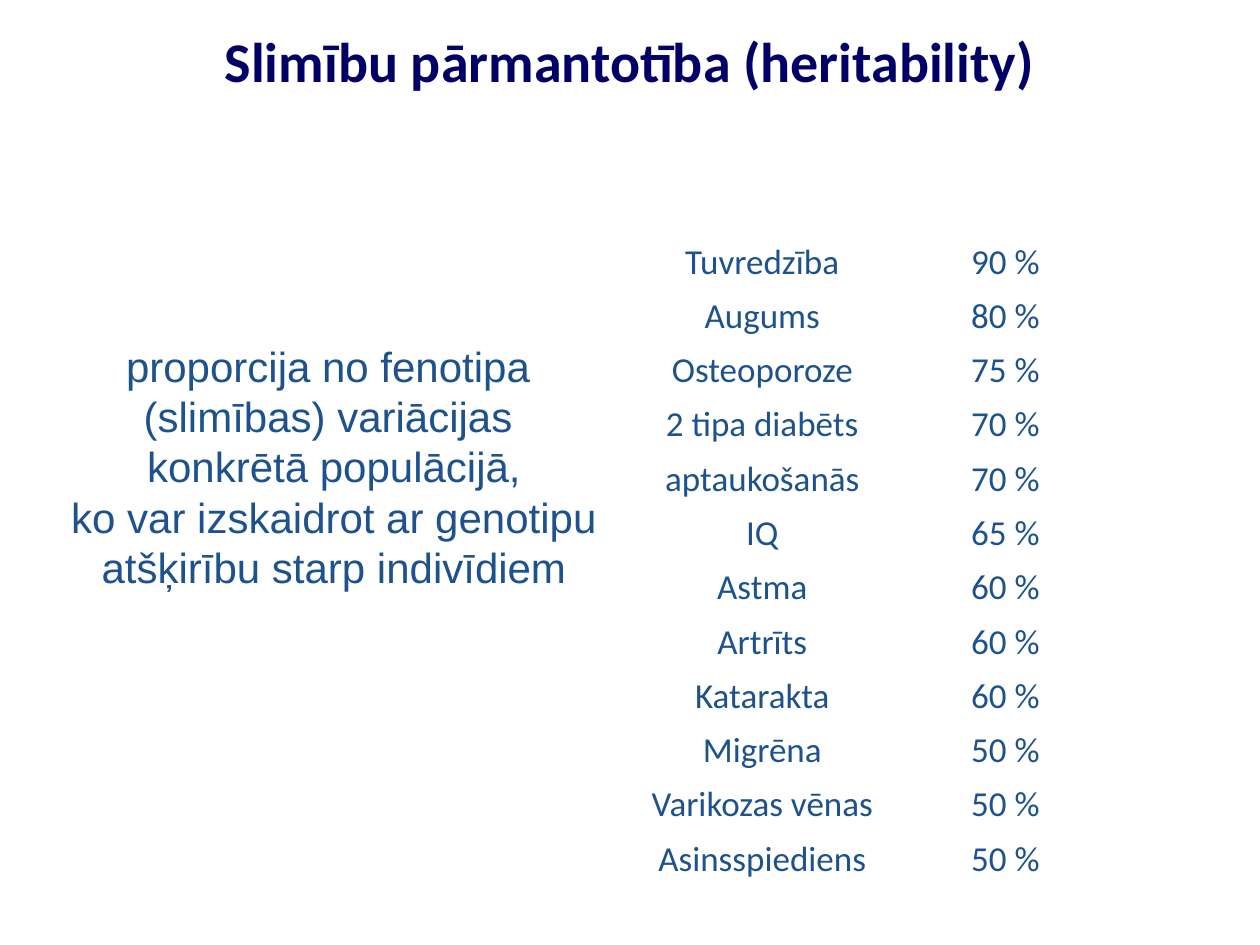
from dataclasses import dataclass

import pptx
import pptx.dml.color
import pptx.enum.text
import pptx.util

Inches = pptx.util.Inches
Anchor = pptx.enum.text.MSO_ANCHOR
AutoSize = pptx.enum.text.MSO_AUTO_SIZE


@dataclass(frozen=True)
class Theme:
    title_color: str = "000066"
    body_color: str = "1D528D"
    heading_font: str = "Calibri"
    body_font: str = "Arial"
    title_size: int = 32
    definition_size: int = 24
    table_size: int = 20


THEME = Theme()

TITLE = "Slimību pārmantotība (heritability)"
DEFINITION = [
    "proporcija no fenotipa ",
    "(slimības) variācijas ",
    "konkrētā populācijā,",
    " ko var izskaidrot ar genotipu \vatšķirību starp indivīdiem",
]
HERITABILITY = [
    ("Tuvredzība", 90),
    ("Augums", 80),
    ("Osteoporoze", 75),
    ("2 tipa diabēts", 70),
    ("aptaukošanās", 70),
    ("IQ", 65),
    ("Astma", 60),
    ("Artrīts", 60),
    ("Katarakta", 60),
    ("Migrēna", 50),
    ("Varikozas vēnas", 50),
    ("Asinsspiediens", 50),
]


def write(frame, text, *, size, font, color, bold=False, line_spacing=None):
    """Fill a text frame with centred paragraphs, one per line of text."""
    for index, line in enumerate(text.split("\n")):
        paragraph = frame.add_paragraph() if index else frame.paragraphs[0]
        paragraph.text = line
        paragraph.alignment = pptx.enum.text.PP_ALIGN.CENTER
        if line_spacing:
            paragraph.line_spacing = line_spacing
        for run in paragraph.runs:
            run.font.size = pptx.util.Pt(size)
            run.font.name = font
            run.font.bold = bold
            run.font.color.rgb = pptx.dml.color.RGBColor.from_string(color)


def add_title(slide, left, top, width, height):
    frame = slide.shapes.add_textbox(left, top, width, height).text_frame
    frame.word_wrap = True
    frame.vertical_anchor = Anchor.MIDDLE
    write(frame, TITLE, size=THEME.title_size, font=THEME.heading_font,
          color=THEME.title_color, bold=True)


def add_definition(slide, left, top, width, height):
    frame = slide.shapes.add_textbox(left, top, width, height).text_frame
    frame.word_wrap = False
    frame.auto_size = AutoSize.SHAPE_TO_FIT_TEXT
    write(frame, "\n".join(DEFINITION), size=THEME.definition_size,
          font=THEME.body_font, color=THEME.body_color)


def add_heritability_table(slide, left, top, width, height):
    table = slide.shapes.add_table(
        len(HERITABILITY), 2, left, top, width, height).table
    table.first_row = False
    table.horz_banding = False
    percent_width = Inches(0.98)
    table.columns[0].width = width - percent_width
    table.columns[1].width = percent_width
    for row, (trait, percent) in zip(table.rows, HERITABILITY):
        for cell, text in zip(row.cells, (trait, f"{percent} %")):
            cell.fill.background()
            cell.margin_left = cell.margin_right = Inches(0.07)
            cell.margin_top = cell.margin_bottom = 0
            write(cell.text_frame, text, size=THEME.table_size,
                  font=THEME.heading_font, color=THEME.body_color,
                  line_spacing=1.15)


def main():
    deck = pptx.Presentation()
    deck.slide_width, deck.slide_height = Inches(10), Inches(7.5)
    slide = deck.slides.add_slide(deck.slide_layouts[6])
    add_title(slide, Inches(0.5), Inches(0.17), Inches(9), Inches(0.62))
    add_heritability_table(
        slide, Inches(4.61), Inches(1.86), Inches(3.86), Inches(5.17))
    add_definition(slide, Inches(0.35), Inches(2.65), Inches(4.6), Inches(2.12))
    deck.save("out.pptx")


if __name__ == "__main__":
    main()
